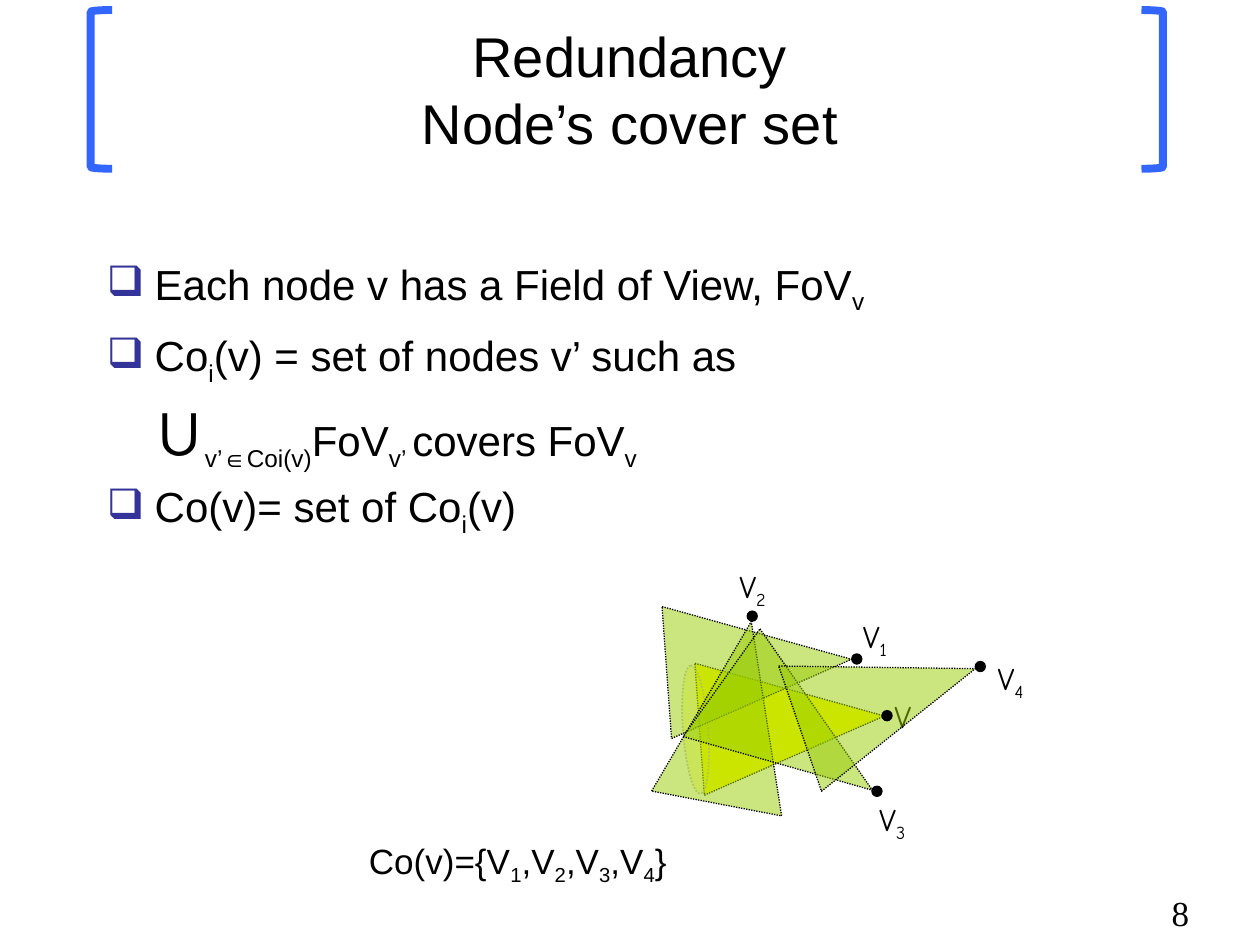
from dataclasses import dataclass

from lxml.etree import SubElement as Sub
from pptx import Presentation
from pptx.dml.color import RGBColor as Rgb
from pptx.enum.dml import MSO_LINE as Dash
from pptx.enum.shapes import MSO_SHAPE as Kind
from pptx.enum.text import MSO_ANCHOR as Anchor, PP_ALIGN as Align
from pptx.oxml.ns import qn
from pptx.shapes.autoshape import Shape
from pptx.shapes.shapetree import _BaseGroupShapes as Tree
from pptx.text.text import TextFrame as Frame, _Paragraph as Para
from pptx.util import Inches, Pt


@dataclass(frozen=True)
class Theme:
    black: str = "000000"
    white: str = "FFFFFF"
    blue: str = "3366FF"
    navy: str = "333399"
    green: str = "99CC00"
    yellow: str = "FFFF00"
    gray: str = "C0C0C0"
    sans: str = "Arial"
    serif: str = "Times New Roman"
    comic: str = "Comic Neue"
    title: int = 32
    body: int = 24
    union: int = 40
    note: int = 20
    label: int = 18


@dataclass(frozen=True)
class Box:
    left: float
    top: float
    width: float
    height: float


@dataclass(frozen=True)
class View:
    left: float
    top: float
    turn: float


@dataclass(frozen=True)
class Label:
    text: str
    left: float
    top: float
    width: float = 0.47


THEME = Theme()
BARS = ((Kind.LEFT_BRACKET, 0.72), (Kind.RIGHT_BRACKET, 9.06))
POINTS = (
    "Each node v has a Field of View, FoV|v",
    "Co|i|(v) = set of nodes v’ such as \v∪|v’∈Coi(v)|FoV|v’ |covers FoV|v",
    "Co(v)= set of Co|i|(v)",
)
MAIN = View(5.76, 5, 85.9)
VIEWS = (View(5.5, 4.55, 85.9), View(5.3, 4.92, 10.8), View(5.8, 5.11, 125.5))
FRONT = View(6.52, 4.81, 71.1)
LABELS = (
    Label("V|4", 7.82, 5.18),
    Label("V|1", 6.75, 4.85),
    Label("V|2", 5.77, 4.45),
    Label("V|3", 6.88, 6.3),
    Label("V", 7, 5.48, 0.37),
)
DOTS = ((5.93, 4.85), (7.74, 5.25), (6.92, 6.24), (6.76, 5.19), (7, 5.64))


def draw(tree: Tree, kind: Kind, box: Box, fill: str, line: str,
         weight: float = 0.75, alpha: int = 100, turn: float = 0,
         dotted: bool = False) -> Shape:
    shape = tree.add_shape(kind, Inches(box.left), Inches(box.top),
                           Inches(box.width), Inches(box.height))
    shape.shadow.inherit = False
    shape.rotation = turn
    shape.fill.solid()
    shape.fill.fore_color.rgb = Rgb.from_string(fill)
    if alpha < 100:
        color = shape.fill._xPr.find(qn("a:solidFill"))[0]
        Sub(color, qn("a:alpha"), val=str(alpha * 1000))
    shape.line.color.rgb = Rgb.from_string(line)
    shape.line.width = Pt(weight)
    if dotted:
        shape.line.dash_style = Dash.ROUND_DOT
    return shape


def cone(tree: Tree, view: View, fill: str, alpha: int = 50) -> None:
    draw(tree, Kind.ISOSCELES_TRIANGLE, Box(view.left, view.top, 1.05, 1.47),
         fill, THEME.black, alpha=alpha, turn=view.turn, dotted=True)


def add_run(para: Para, text: str, size: int, font: str, low: bool) -> None:
    if not text:
        return
    run = para.add_run()
    run.text = text
    run.font.size = Pt(THEME.union if text == "∪" else size)
    run.font.name = font
    run.font.color.rgb = Rgb.from_string(THEME.black)
    if low:
        run._r.get_or_add_rPr().set("baseline", "-25000")


def write(para: Para, text: str, size: int, font: str) -> None:
    """Write text in which bars switch subscript on and off."""
    for n, part in enumerate(text.split("|")):
        head, gap, tail = part.partition("\v")
        add_run(para, head, size, font, n % 2 == 1)
        if gap:
            para.add_line_break()
        add_run(para, tail, size, font, n % 2 == 1)


def add_text(tree: Tree, box: Box, text: str, size: int, font: str) -> Frame:
    frame = tree.add_textbox(Inches(box.left), Inches(box.top),
                             Inches(box.width), Inches(box.height)).text_frame
    frame.word_wrap = True
    write(frame.paragraphs[0], text, size, font)
    return frame


def bullet(para: Para) -> None:
    props = para._p.get_or_add_pPr()
    props.set("marL", str(Inches(0.38)))
    props.set("indent", str(Inches(-0.38)))
    Sub(Sub(props, qn("a:spcBef")), qn("a:spcPct"), val="20000")
    Sub(Sub(props, qn("a:buClr")), qn("a:srgbClr"), val=THEME.navy)
    Sub(props, qn("a:buChar"), char="❑")


def add_body(tree: Tree) -> None:
    frame = add_text(tree, Box(0.75, 2, 8.5, 5), POINTS[0], THEME.body, THEME.sans)
    for text in POINTS[1:]:
        write(frame.add_paragraph(), text, THEME.body, THEME.sans)
    for para in frame.paragraphs:
        bullet(para)


def add_scene(tree: Tree) -> None:
    group = tree.add_group_shape().shapes
    cone(group, MAIN, THEME.yellow, 100)
    draw(group, Kind.OVAL, Box(5.01, 5.69, 1.02, 0.2), THEME.yellow,
         THEME.gray, 1, 28, 85.8, True)
    for view in VIEWS:
        cone(tree, view, THEME.green)
    for label in LABELS:
        add_text(tree, Box(label.left, label.top, label.width, 0.4),
                 label.text, THEME.label, THEME.comic)
    add_text(tree, Box(2.83, 6.61, 3.56, 0.44), "Co(v)={V|1|,V|2|,V|3|,V|4|}",
             THEME.note, THEME.sans)
    cone(tree, FRONT, THEME.green)
    for left, top in DOTS:
        draw(tree, Kind.OVAL, Box(left, top, 0.08, 0.08), THEME.black, THEME.black)


def main() -> None:
    deck = Presentation()
    deck.slide_width, deck.slide_height = Inches(10), Inches(7.5)
    tree = deck.slides.add_slide(deck.slide_layouts[6]).shapes
    for kind, left in BARS:
        draw(tree, kind, Box(left, 0.08, 0.17, 1.26), THEME.white, THEME.blue, 4.5)
    add_text(tree, Box(9.2, 7.03, 0.53, 0.43), "8", THEME.note, THEME.serif)
    title = add_text(tree, Box(0.75, 0.08, 8.5, 1.25),
                     "Redundancy\vNode’s cover set", THEME.title, THEME.sans)
    title.vertical_anchor = Anchor.MIDDLE
    title.paragraphs[0].alignment = Align.CENTER
    add_body(tree)
    add_scene(tree)
    deck.save("out.pptx")


if __name__ == "__main__":
    main()
